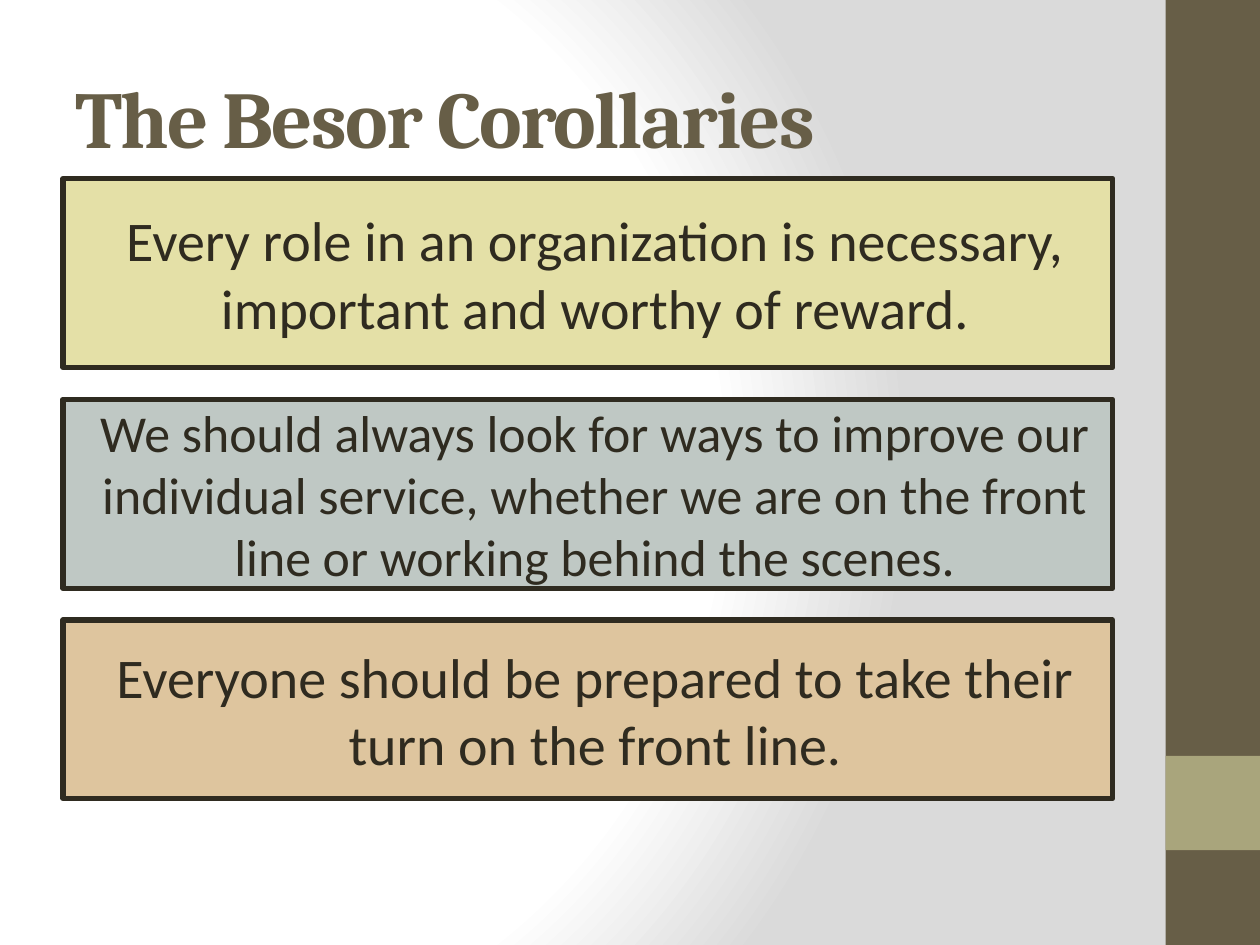
"""Build the Besor Corollaries slide."""
from dataclasses import dataclass

from lxml import etree
from pptx import Presentation
from pptx import util as u
from pptx.dml.color import RGBColor
from pptx.enum import shapes, text
from pptx.oxml import parse_xml
from pptx.oxml.ns import nsdecls, qn

BROWN, OLIVE, DARK = "675E47", "A9A57C", "2F2B20"
LEFT, WIDTH = 1.27, 21.16
BAR_LEFT, BAR_WIDTH = 23.5, 1.9
STOPS = ((0, "FFFFFF"), (75, "FFFFFF"), (100, "DADADA"))


@dataclass
class Corollary:
    top: float
    height: float
    fill: str
    size: float
    words: str


COROLLARIES = (
    Corollary(3.6, 3.81, "E4E0A7", 32,
              "Every role in an organization is necessary, important and worthy of reward."),
    Corollary(8.05, 3.81, "BFC8C4", 29.6,
              "We should always look for ways to improve our individual service, "
              "whether we are on the front line or working behind the scenes."),
    Corollary(12.5, 3.6, "DEC59E", 32,
              "Everyone should be prepared to take their turn on the front line."),
)


def color(value: str) -> RGBColor:
    return RGBColor.from_string(value)


def paint_background(s) -> None:
    s.background.fill.gradient()
    old = s.element.find(".//" + qn("a:gradFill"))
    stops = "".join(f'<a:gs pos="{pos * 1000}"><a:srgbClr val="{value}"/></a:gs>'
                    for pos, value in STOPS)
    old.getparent().replace(old, parse_xml(
        f'<a:gradFill {nsdecls("a")} rotWithShape="1"><a:gsLst>{stops}</a:gsLst>'
        '<a:path path="circle"><a:fillToRect l="20000" t="50000" r="100000" b="50000"/>'
        '</a:path></a:gradFill>'))


def add_box(s, left: float, top: float, width: float, height: float, fill: str):
    sp = s.shapes.add_shape(shapes.MSO_SHAPE.RECTANGLE, u.Cm(left), u.Cm(top),
                            u.Cm(width), u.Cm(height))
    sp.shadow.inherit = False
    sp.fill.solid()
    sp.fill.fore_color.rgb = color(fill)
    sp.line.fill.background()
    return sp


def write(sp, words: str, font: str, size: float, value: str):
    tf = sp.text_frame
    tf.word_wrap = True
    tf.vertical_anchor = text.MSO_ANCHOR.MIDDLE
    p = tf.paragraphs[0]
    p.text = words
    p.font.name, p.font.size = font, u.Pt(size)
    p.font.color.rgb = color(value)
    return p


def add_title(s, words: str) -> None:
    sp = s.shapes.add_textbox(u.Cm(LEFT), u.Cm(0.76), u.Cm(WIDTH), u.Cm(3.18))
    p = write(sp, words, "Cambria", 46, BROWN)
    p.font.bold = True
    p.runs[0].font._element.set("spc", "-100")


def add_corollary(s, item: Corollary) -> None:
    sp = add_box(s, LEFT, item.top, WIDTH, item.height, item.fill)
    sp.line.color.rgb = color(DARK)
    sp.line.width = u.Pt(3)
    etree.SubElement(sp.line._get_or_add_ln(), qn("a:round"))
    p = write(sp, item.words, "Calibri", item.size, DARK)
    p.alignment = text.PP_ALIGN.CENTER
    p.space_before = u.Pt(item.size * 0.2)
    p._p.get_or_add_pPr().set("marL", str(u.Cm(0.3)))


def main() -> None:
    prs = Presentation()
    prs.slide_width, prs.slide_height = u.Cm(25.4), u.Cm(19.05)
    s = prs.slides.add_slide(prs.slide_layouts[6])
    paint_background(s)
    add_box(s, BAR_LEFT, 0, BAR_WIDTH, 19.05, BROWN)
    add_box(s, BAR_LEFT, 15.24, BAR_WIDTH, 1.9, OLIVE)
    add_title(s, "The Besor Corollaries")
    for item in COROLLARIES:
        add_corollary(s, item)
    prs.save("out.pptx")


if __name__ == "__main__":
    main()
